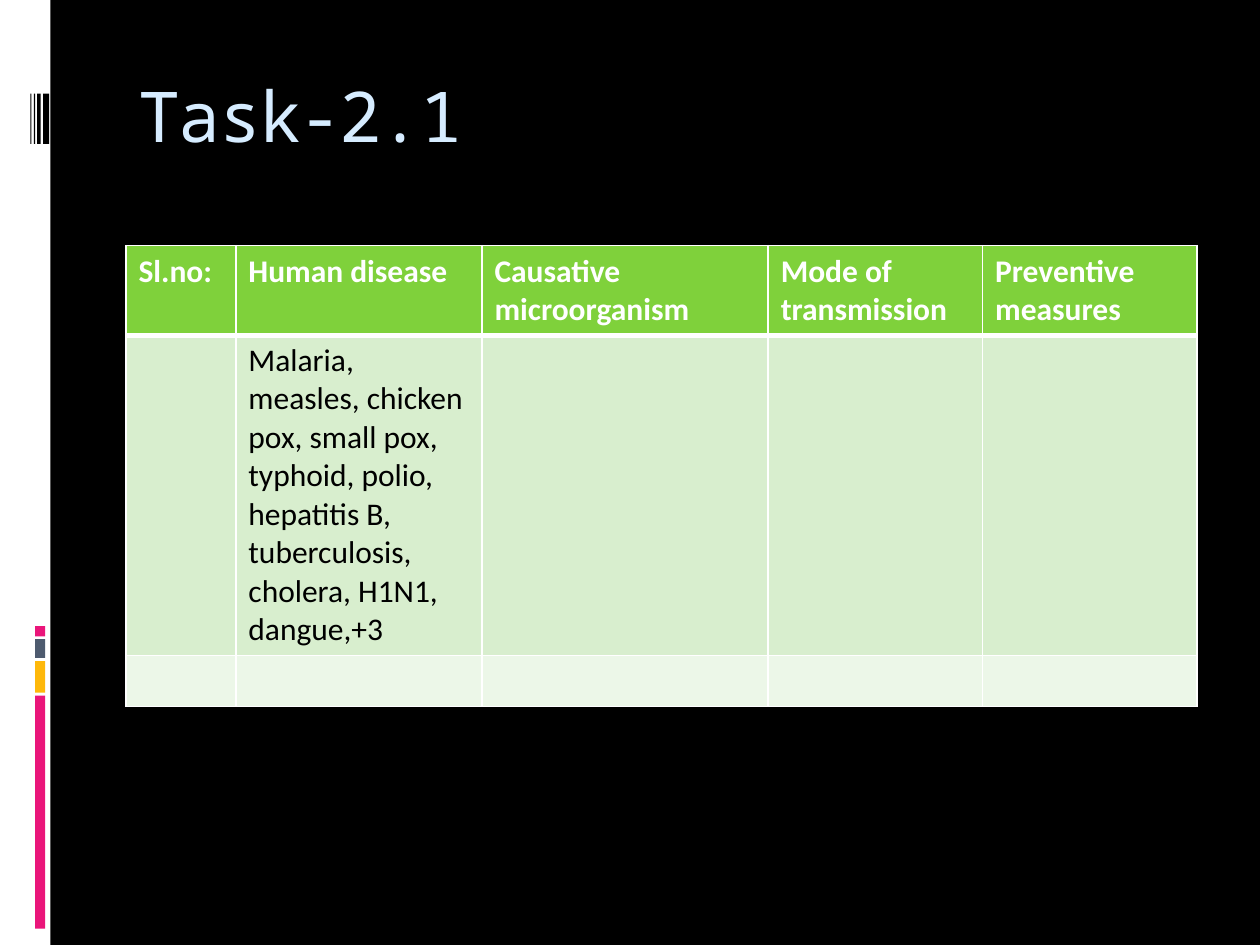
from dataclasses import dataclass

from lxml import etree
from pptx import Presentation
from pptx.dml.color import RGBColor
from pptx.enum import shapes, text
from pptx.oxml import ns
from pptx.util import Pt


@dataclass(frozen=True)
class Theme:
    black: str = "000000"
    white: str = "FFFFFF"
    pink: str = "EA157A"
    amber: str = "FEB80A"
    slate: str = "4E5B6F"
    title: str = "D6ECFF"
    header: str = "7FD13B"
    bands: tuple = ("D8EECE", "ECF7E8")
    title_font: str = "Noto Sans Mono"
    body_font: str = "Calibri"
    title_size: float = 40
    body_size: float = 18


def paint(fill, color):
    fill.solid()
    fill.fore_color.rgb = RGBColor.from_string(color)


def write(frame, words, *, font, size, color, bold=False, spacing=None):
    """Put words in the frame's first paragraph; spacing is in points."""
    span = frame.paragraphs[0].add_run()
    span.text = words
    span.font.name = font
    span.font.size = Pt(size)
    span.font.bold = bold
    span.font.color.rgb = RGBColor.from_string(color)
    if spacing is not None:
        span.font._element.set("spc", str(round(spacing * 100)))
    frame.paragraphs[0].alignment = text.PP_ALIGN.LEFT


def border(cell, color, **widths):
    """Line the cell's sides, given as L, R, T, B widths in points."""
    properties = cell._tc.get_or_add_tcPr()
    for position, (side, width) in enumerate(widths.items()):
        line = etree.Element(ns.qn(f"a:ln{side}"), w=str(Pt(width)))
        solid = etree.SubElement(line, ns.qn("a:solidFill"))
        etree.SubElement(solid, ns.qn("a:srgbClr"), val=color)
        properties.insert(position, line)


class SlideBuilder:
    def __init__(self, page, theme):
        self.page = page
        self.theme = theme
        paint(page.background.fill, theme.black)

    def bar(self, left, top, width, height, color):
        box = self.page.shapes.add_shape(
            shapes.MSO_SHAPE.RECTANGLE, Pt(left), Pt(top), Pt(width), Pt(height))
        box.shadow.inherit = False
        paint(box.fill, color)
        box.line.fill.background()

    def title(self, words, left, top, width, height):
        box = self.page.shapes.title
        box.left, box.top, box.width, box.height = map(Pt, (left, top, width, height))
        frame = box.text_frame
        frame.word_wrap = True
        frame.auto_size = text.MSO_AUTO_SIZE.NONE
        frame.vertical_anchor = text.MSO_ANCHOR.TOP
        frame.margin_top = Pt(1)
        write(frame, words, font=self.theme.title_font, size=self.theme.title_size,
              color=self.theme.title, spacing=-1)

    def table(self, rows, left, top, widths, row_height):
        theme = self.theme
        grid = self.page.shapes.add_table(
            len(rows), len(widths), Pt(left), Pt(top),
            Pt(sum(widths)), Pt(row_height * len(rows))).table
        for column, width in zip(grid.columns, widths):
            column.width = Pt(width)
        for r, row in enumerate(rows):
            header = r == 0
            for c, words in enumerate(row):
                cell = grid.cell(r, c)
                paint(cell.fill, theme.header if header else theme.bands[(r - 1) % 2])
                border(cell, theme.white, L=1, R=1,
                       T=3 if r == 1 else 1, B=3 if header else 1)
                if words:
                    write(cell.text_frame, words, font=theme.body_font,
                          size=theme.body_size, bold=header,
                          color=theme.white if header else theme.black)


def main():
    theme = Theme()
    deck = Presentation()
    deck.slide_width, deck.slide_height = Pt(720), Pt(540)
    slide = SlideBuilder(deck.slides.add_slide(deck.slide_layouts[5]), theme)

    slide.bar(0, 0, 28.8, 540, theme.white)
    for top, height, color in (
        (397.5, 133.2, theme.pink),
        (377.8, 18, theme.amber),
        (365.2, 10.8, theme.slate),
        (357.8, 5.8, theme.pink),
    ):
        slide.bar(20, top, 5.8, height, color)
    for left, width in ((24.6, 3.5), (21.2, 2), (19.4, 0.7), (17.4, 0.5)):
        slide.bar(left, 53.5, width, 28.8, theme.black)

    slide.title("Task-2.1", 72, 40.3, 612, 72)
    diseases = ("Malaria, measles, chicken pox, small pox, typhoid, polio, "
                "hepatitis B, tuberculosis, cholera, H1N1, dangue,+3")
    slide.table(
        [["Sl.no:", "Human disease", "Causative microorganism",
          "Mode of transmission", "Preventive measures"],
         ["", diseases, "", "", ""],
         [""] * 5],
        72, 140.4, (62.8, 140.6, 163.6, 122.5, 122.5), 29.2)

    deck.save("out.pptx")


if __name__ == "__main__":
    main()
